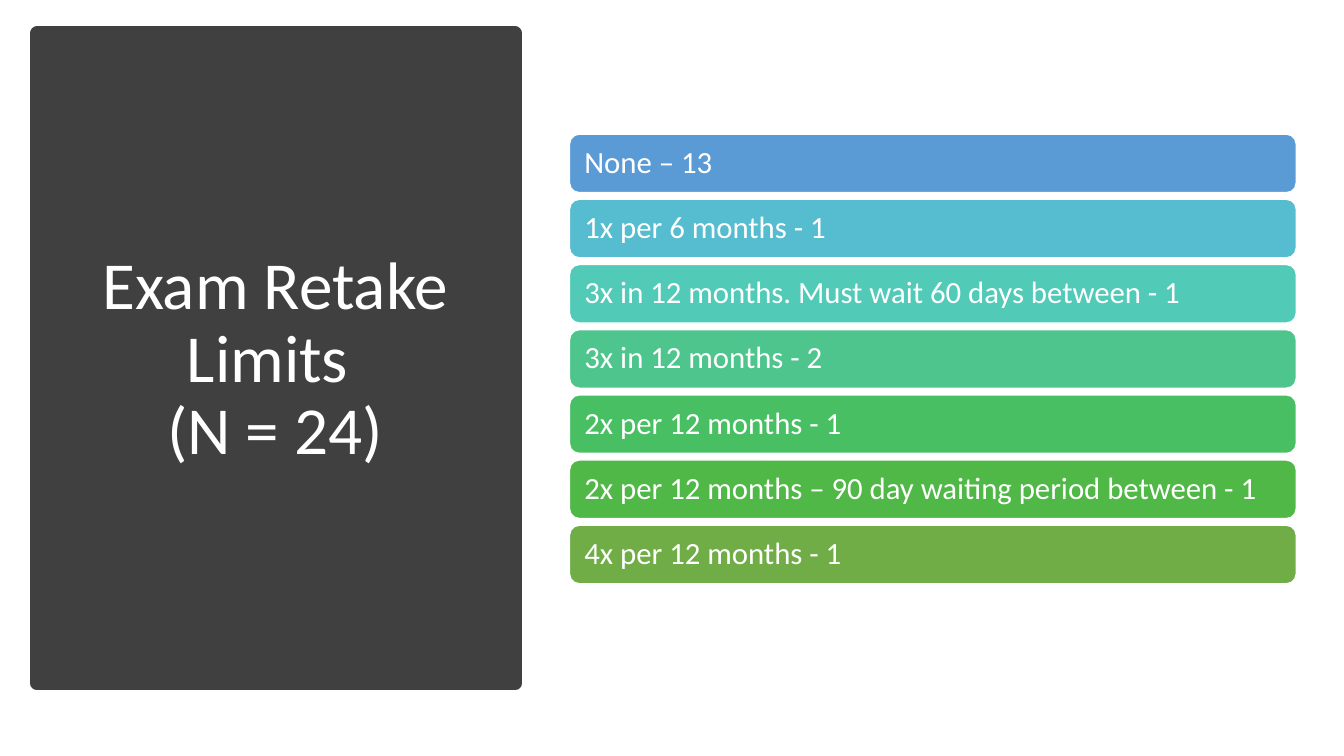
from pptx import Presentation
from pptx.dml.color import RGBColor
from pptx.enum.shapes import MSO_SHAPE
from pptx.enum.text import MSO_ANCHOR, MSO_AUTO_SIZE, PP_ALIGN
from pptx.util import Pt

RECT, ROUND = MSO_SHAPE.RECTANGLE, MSO_SHAPE.ROUNDED_RECTANGLE
MIDDLE, NO_FIT = MSO_ANCHOR.MIDDLE, MSO_AUTO_SIZE.NONE
LEFT, CENTER = PP_ALIGN.LEFT, PP_ALIGN.CENTER

COLORS = {
    "white": "FFFFFF", "panel": "404040", "blue": "5B9BD5", "cyan": "56BCD0",
    "teal": "52CAB8", "mint": "4DC58D", "emerald": "49BF64",
    "green": "50B846", "olive": "70AD47",
}
LIMITS = [
    ("None – 13", "blue"),
    ("1x per 6 months - 1", "cyan"),
    ("3x in 12 months. Must wait 60 days between - 1", "teal"),
    ("3x in 12 months - 2", "mint"),
    ("2x per 12 months - 1", "emerald"),
    ("2x per 12 months – 90 day waiting period between - 1", "green"),
    ("4x per 12 months - 1", "olive"),
]
BAR_LEFT, BAR_TOP, BAR_WIDTH, BAR_HEIGHT = 406.8, 95.8, 519.1, 41.8
BAR_PITCH = 46.56


class SlideBuilder:
    font = "Calibri"

    def __init__(self, s):
        self.s = s

    def color(self, name):
        return RGBColor.from_string(COLORS[name])

    def set_text(self, tf, lines, size, align, **frame):
        frame = {"word_wrap": True, "auto_size": NO_FIT,
                 "vertical_anchor": MIDDLE, **frame}
        for key, value in frame.items():
            setattr(tf, key, value)
        p = tf.paragraphs[0]
        p.alignment, p.line_spacing = align, 0.9
        for i, line in enumerate(lines):
            if i:
                p.add_line_break()
            r = p.add_run()
            r.text = line
            for key, value in {"name": self.font, "size": Pt(size)}.items():
                setattr(r.font, key, value)
            r.font.color.rgb = self.color("white")

    def box(self, kind, left, top, width, height, fill, line, weight):
        sp = self.s.shapes.add_shape(kind, Pt(left), Pt(top), Pt(width), Pt(height))
        sp.shadow.inherit = False
        sp.fill.solid()
        sp.fill.fore_color.rgb = self.color(fill)
        sp.line.color.rgb = self.color(line)
        sp.line.width = Pt(weight)
        return sp

    def title(self, lines, left, top, width, height):
        sp = self.s.shapes.title
        place = {"left": left, "top": top, "width": width, "height": height}
        for key, value in place.items():
            setattr(sp, key, Pt(value))
        self.set_text(sp.text_frame, lines, 48, CENTER)
        return sp

    def bar(self, top, text, fill):
        sp = self.box(ROUND, BAR_LEFT, top, BAR_WIDTH, BAR_HEIGHT, fill, "white", 1)
        self.set_text(sp.text_frame, [text], 22, LEFT,
                      margin_left=Pt(8.6), margin_right=Pt(8.6))


def main():
    prs = Presentation()
    prs.slide_width, prs.slide_height = Pt(960), Pt(540)
    slide = SlideBuilder(prs.slides.add_slide(prs.slide_layouts[5]))

    # Dark panel, placed behind the title
    panel = slide.box(RECT, 26.6, 23.8, 341.3, 464.4, "panel", "panel", 10)
    title = slide.title(["Exam Retake Limits ", "(N = 24)"], 46.8, 50.4, 299.5, 414)
    title.element.addprevious(panel.element)

    # One bar per retake limit
    for i, (text, fill) in enumerate(LIMITS):
        slide.bar(BAR_TOP + i * BAR_PITCH, text, fill)

    prs.save("out.pptx")


if __name__ == "__main__":
    main()
